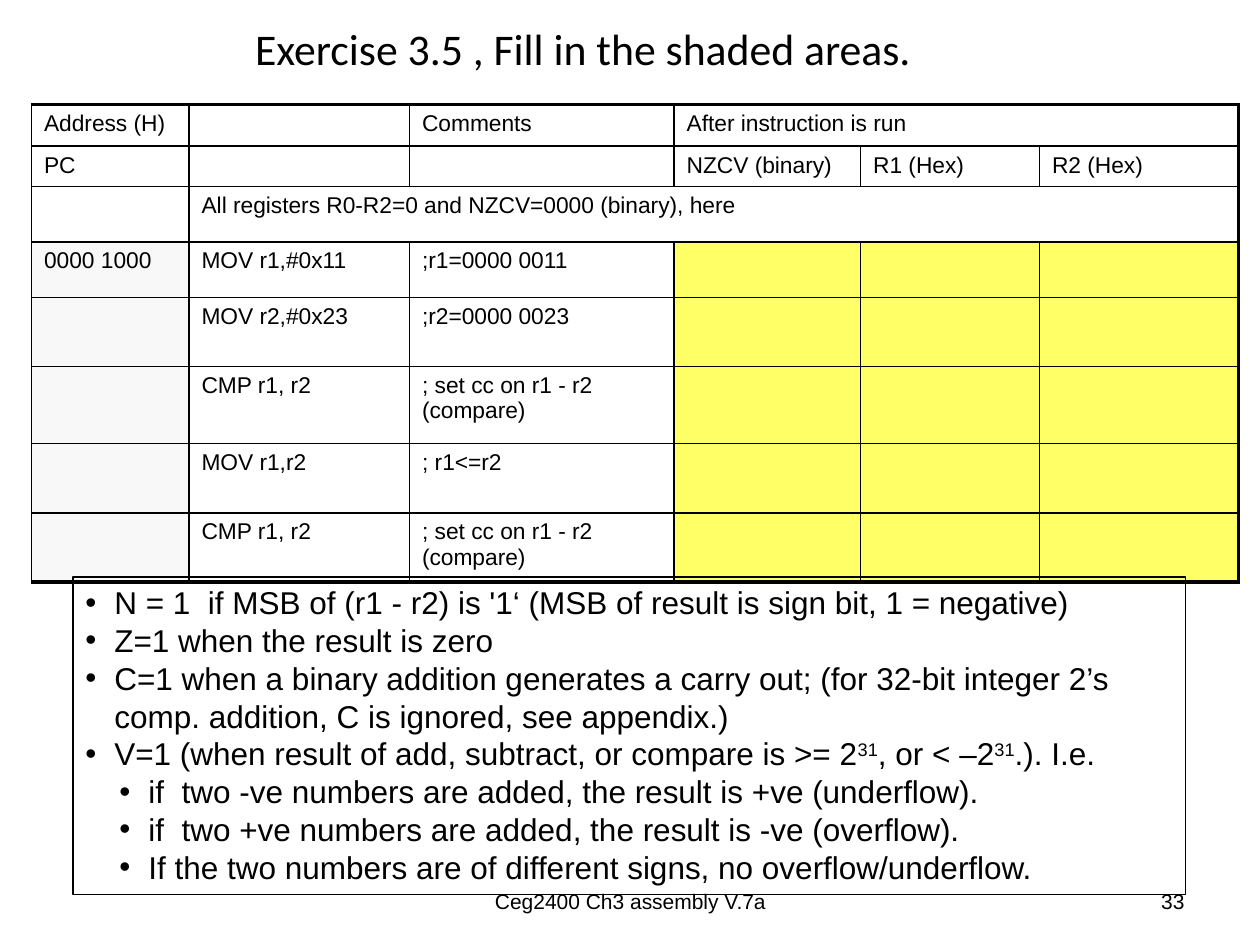
from lxml import etree
from pptx import Presentation
from pptx.dml.color import RGBColor
from pptx.enum.shapes import MSO_SHAPE
from pptx.enum.text import MSO_ANCHOR, PP_ALIGN
from pptx.oxml.ns import qn
from pptx.util import Inches, Pt

LEFT, CENTER, RIGHT = PP_ALIGN.LEFT, PP_ALIGN.CENTER, PP_ALIGN.RIGHT
TOP, MIDDLE = MSO_ANCHOR.TOP, MSO_ANCHOR.MIDDLE
RECTANGLE = MSO_SHAPE.RECTANGLE

BLACK, WHITE, GREY, YELLOW = "000000", "FFFFFF", "F8F8F8", "FFFF66"
THIN, THICK = 1, 2.25
HANGING = 0.23

COLUMN_WIDTHS = [1.25, 1.75, 2.1, 1.48, 1.42, 1.58]
ROW_HEIGHTS = [0.33, 0.32, 0.44, 0.44, 0.55, 0.61, 0.55, 0.55]
FIRST_EXERCISE_ROW = 3
FIRST_ANSWER_COLUMN = 3
ROWS = [
    ["Address (H)", "", "Comments", "After instruction is run", "", ""],
    ["PC", "", "", "NZCV (binary)", "R1 (Hex)", "R2 (Hex)"],
    ["", "All registers R0-R2=0 and NZCV=0000 (binary), here", "", "", "", ""],
    ["0000 1000", "MOV r1,#0x11", ";r1=0000 0011", "", "", ""],
    ["", "MOV r2,#0x23", ";r2=0000 0023", "", "", ""],
    ["", "CMP r1, r2", "; set cc on r1 - r2 (compare)", "", "", ""],
    ["", "MOV r1,r2", "; r1<=r2", "", "", ""],
    ["", "CMP r1, r2", "; set cc on r1 - r2 (compare)", "", "", ""],
]
MERGES = [(0, 3), (2, 1)]

FLAG_NOTES = [
    (0, "N = 1  if MSB of (r1 - r2) is '1‘ (MSB of result is sign bit, 1 = negative)"),
    (0, "Z=1 when the result is zero"),
    (0, "C=1 when a binary addition generates a carry out; "
        "(for 32-bit integer 2’s comp. addition, C is ignored, see appendix.)"),
    (0, "V=1 (when result of add, subtract, or compare is >= 2^31^, or < –2^31^.). I.e."),
    (1, "if  two -ve numbers are added, the result is +ve (underflow)."),
    (1, "if  two +ve numbers are added, the result is -ve (overflow)."),
    (1, "If the two numbers are of different signs, no overflow/underflow."),
]


def color(value):
    return RGBColor.from_string(value)


def write(para, text, size=13, font="Arial", fill=BLACK, align=LEFT):
    para.alignment = align
    for index, part in enumerate(text.split("^")):
        span = para.add_run()
        span.text = part
        span.font.size = Pt(size)
        span.font.name = font
        span.font.color.rgb = color(fill)
        if index % 2:
            span.font._element.set("baseline", "30000")


def add_bullet(para, level):
    margin = 0.5 if level else HANGING
    para.level = level
    properties = para._p.get_or_add_pPr()
    properties.set("marL", str(Inches(margin)))
    properties.set("indent", str(Inches(-HANGING)))
    bullet_color = etree.SubElement(properties, qn("a:buClr"))
    etree.SubElement(bullet_color, qn("a:srgbClr"), val=BLACK)
    etree.SubElement(properties, qn("a:buFont"), typeface="Arial")
    etree.SubElement(properties, qn("a:buChar"), char="•")


def add_border(cell, side, width):
    line = etree.SubElement(cell._tc.get_or_add_tcPr(), qn("a:ln" + side), w=str(Pt(width)))
    fill = etree.SubElement(line, qn("a:solidFill"))
    etree.SubElement(fill, qn("a:srgbClr"), val=BLACK)


def cell_fill(row, column):
    if row < FIRST_EXERCISE_ROW:
        return WHITE
    if column >= FIRST_ANSWER_COLUMN:
        return YELLOW
    return WHITE if column else GREY


def format_cell(cell, row, column, text):
    last_row, last_column = len(ROWS) - 1, len(COLUMN_WIDTHS) - 1
    widths = {
        "L": THIN,
        "R": THICK if column == last_column or cell.is_merge_origin else THIN,
        "T": THIN if row else THICK,
        "B": THICK if row == last_row else THIN,
    }
    for side, width in widths.items():
        add_border(cell, side, width)
    cell.fill.solid()
    cell.fill.fore_color.rgb = color(cell_fill(row, column))
    para = cell.text_frame.paragraphs[0]
    if text:
        write(para, text)
    else:
        etree.SubElement(para._p, qn("a:endParaRPr"), sz="1300")


def add_title(page, left, top, width, height):
    title = page.shapes.title
    title.left, title.top, title.width, title.height = map(Inches, (left, top, width, height))
    title.text_frame.vertical_anchor = MIDDLE
    write(title.text_frame.paragraphs[0], "Exercise 3.5 , Fill in the shaded areas.",
          size=25, font="Calibri", align=CENTER)


def add_register_table(page, left, top, width, height):
    table = page.shapes.add_table(len(ROWS), len(COLUMN_WIDTHS),
                                  *map(Inches, (left, top, width, height))).table
    table.first_row = False
    table.horz_banding = False
    for column, column_width in zip(table.columns, COLUMN_WIDTHS):
        column.width = Inches(column_width)
    for row, row_height in zip(table.rows, ROW_HEIGHTS):
        row.height = Inches(row_height)
    for row, column in MERGES:
        table.cell(row, column).merge(table.cell(row, len(COLUMN_WIDTHS) - 1))
    for row, texts in enumerate(ROWS):
        for column, text in enumerate(texts):
            format_cell(table.cell(row, column), row, column, text)


def add_flag_notes(page, left, top, width, height):
    box = page.shapes.add_shape(RECTANGLE, *map(Inches, (left, top, width, height)))
    box.shadow.inherit = False
    box.fill.background()
    box.line.color.rgb = color(BLACK)
    box.line.width = Pt(0.75)
    frame = box.text_frame
    frame.word_wrap = True
    frame.vertical_anchor = TOP
    for index, (level, text) in enumerate(FLAG_NOTES):
        para = frame.add_paragraph() if index else frame.paragraphs[0]
        add_bullet(para, level)
        write(para, text, size=18)


def add_footer(page, text, align, left, top, width, height):
    box = page.shapes.add_textbox(*map(Inches, (left, top, width, height)))
    box.text_frame.word_wrap = True
    box.text_frame.vertical_anchor = MIDDLE
    write(box.text_frame.paragraphs[0], text, size=12, align=align)


def main():
    deck = Presentation()
    deck.slide_width, deck.slide_height = Inches(10), Inches(7.5)
    page = deck.slides.add_slide(deck.slide_layouts[5])
    add_title(page, 0.5, 0.13, 8.25, 0.51)
    add_register_table(page, 0.25, 0.83, sum(COLUMN_WIDTHS), sum(ROW_HEIGHTS))
    add_footer(page, "Ceg2400 Ch3 assembly V.7a", CENTER, 3.42, 6.95, 3.17, 0.4)
    add_footer(page, "33", RIGHT, 7.17, 6.95, 2.33, 0.4)
    add_flag_notes(page, 0.58, 4.58, 8.83, 2.52)
    deck.save("out.pptx")


if __name__ == "__main__":
    main()
